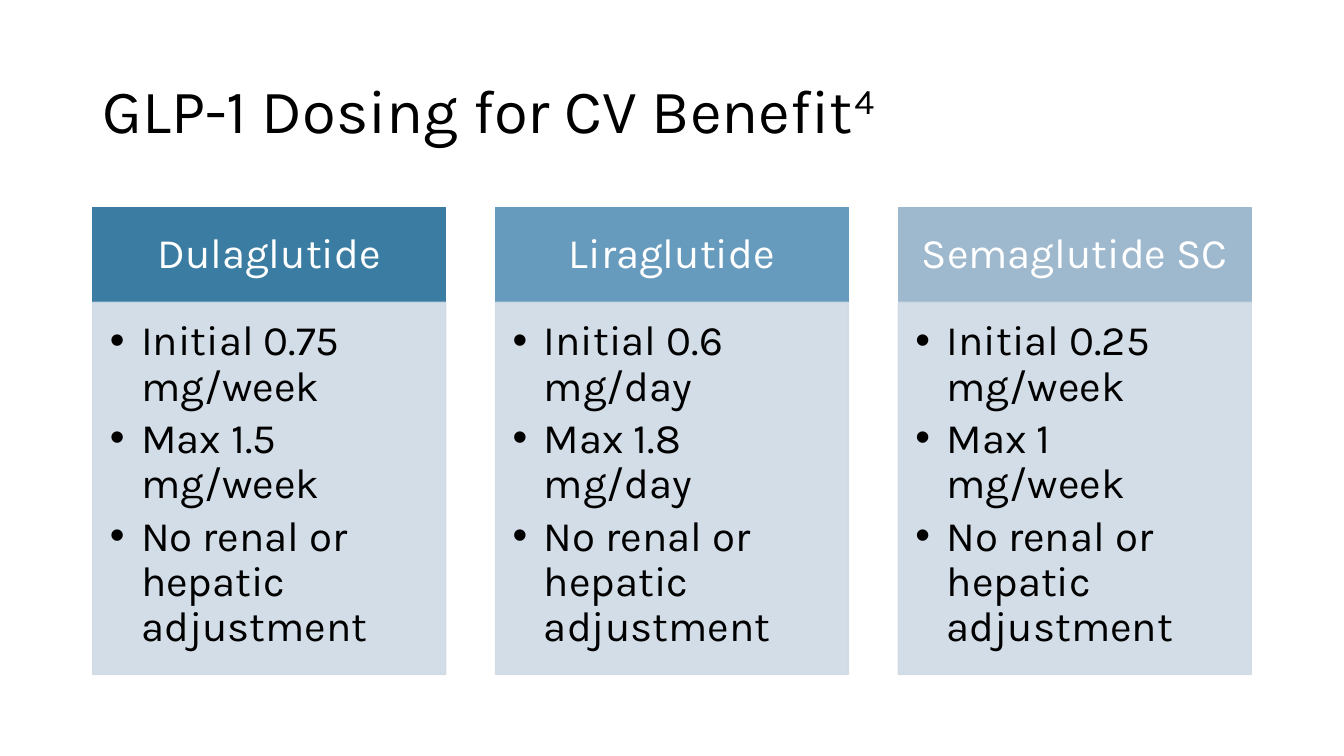
import pptx
import pptx.dml.color
import pptx.enum.shapes
import pptx.enum.text
import pptx.oxml
import pptx.oxml.ns
import pptx.util
from pptx.util import Inches

TITLE = "GLP-1 Dosing for CV Benefit"
TITLE_REFERENCE = "4"
ADJUSTMENT = "No renal or hepatic adjustment"
DRUGS = [
    ("Dulaglutide", "dulaglutide", ["Initial 0.75 mg/week", "Max 1.5 mg/week", ADJUSTMENT]),
    ("Liraglutide", "liraglutide", ["Initial 0.6 mg/day", "Max 1.8 mg/day", ADJUSTMENT]),
    ("Semaglutide SC", "semaglutide", ["Initial 0.25 mg/week", "Max 1 mg/week", ADJUSTMENT]),
]
COLORS = {
    "dulaglutide": "3B7DA2",
    "liraglutide": "679BBD",
    "semaglutide": "9EB8CE",
    "body": "CFDAE5",
    "text": "000000",
    "heading": "FFFFFF",
}
FONT = "Karla"
LEFT, CONTENT_WIDTH, COLUMN_WIDTH = 0.92, 11.49, 3.5
HEADING_TOP, HEADING_HEIGHT, BODY_HEIGHT = 2.06, 0.94, 3.69
BODY_OPACITY = 90
HEADING_INSETS = (0.23, 0.13, 0.23, 0.13)
BODY_INSETS = (0.17, 0.17, 0.23, 0.26)
BULLET_INDENT = 0.31


def rgb(name):
    return pptx.dml.color.RGBColor.from_string(COLORS[name])


def format_run(run, size, color):
    run.font.name = FONT
    run.font.size = pptx.util.Pt(size)
    run.font.color.rgb = rgb(color)


def add_panel(slide, left, top, height, color, lines, text_color, insets, anchor, alignment, space_after):
    shape = slide.shapes.add_shape(
        pptx.enum.shapes.MSO_SHAPE.RECTANGLE,
        Inches(left), Inches(top), Inches(COLUMN_WIDTH), Inches(height))
    shape.shadow.inherit = False
    shape.fill.solid()
    shape.fill.fore_color.rgb = rgb(color)
    shape.line.color.rgb = rgb(color)
    shape.line.width = pptx.util.Pt(1)
    frame = shape.text_frame
    frame.word_wrap = True
    frame.vertical_anchor = anchor
    frame.margin_left, frame.margin_top, frame.margin_right, frame.margin_bottom = map(Inches, insets)
    frame.text = "\n".join(lines)
    for paragraph in frame.paragraphs:
        paragraph.alignment = alignment
        paragraph.line_spacing = 0.9
        paragraph.space_after = pptx.util.Pt(space_after)
        format_run(paragraph.runs[0], 30, text_color)
    return shape


def set_opacity(shape, percent):
    for color in shape.element.spPr.iter(pptx.oxml.ns.qn("a:srgbClr")):
        alpha = pptx.oxml.parse_xml(f'<a:alpha {pptx.oxml.ns.nsdecls("a")} val="{percent * 1000}"/>')
        color.append(alpha)


def add_bullet(paragraph):
    properties = paragraph._p.get_or_add_pPr()
    properties.set("marL", str(Inches(BULLET_INDENT)))
    properties.set("indent", str(-Inches(BULLET_INDENT)))
    namespace = pptx.oxml.ns.nsdecls("a")
    properties.append(pptx.oxml.parse_xml(f'<a:buFont {namespace} typeface="Arial"/>'))
    properties.append(pptx.oxml.parse_xml(f'<a:buChar {namespace} char="•"/>'))


def add_title(slide):
    title = slide.shapes.title
    title.left, title.top, title.width, title.height = map(Inches, (LEFT, 0.4, 11.5, 1.45))
    frame = title.text_frame
    frame.text = TITLE
    frame.word_wrap = True
    frame.auto_size = pptx.enum.text.MSO_AUTO_SIZE.NONE
    frame.vertical_anchor = pptx.enum.text.MSO_ANCHOR.MIDDLE
    paragraph = frame.paragraphs[0]
    paragraph.alignment = pptx.enum.text.PP_ALIGN.LEFT
    paragraph.line_spacing = 0.9
    reference = paragraph.add_run()
    reference.text = TITLE_REFERENCE
    for run in paragraph.runs:
        format_run(run, 44, "text")
    reference.font._element.set("baseline", "30000")


def main():
    presentation = pptx.Presentation()
    presentation.slide_width = Inches(13.33)
    presentation.slide_height = Inches(7.5)
    slide = presentation.slides.add_slide(presentation.slide_layouts[5])
    add_title(slide)

    anchors = pptx.enum.text.MSO_ANCHOR
    alignments = pptx.enum.text.PP_ALIGN
    pitch = (CONTENT_WIDTH - COLUMN_WIDTH) / (len(DRUGS) - 1)
    for index, (name, color, doses) in enumerate(DRUGS):
        left = LEFT + index * pitch
        add_panel(slide, left, HEADING_TOP, HEADING_HEIGHT, color, [name], "heading",
                  HEADING_INSETS, anchors.MIDDLE, alignments.CENTER, 0)
        body = add_panel(slide, left, HEADING_TOP + HEADING_HEIGHT, BODY_HEIGHT, "body", doses, "text",
                         BODY_INSETS, anchors.TOP, alignments.LEFT, 5)
        set_opacity(body, BODY_OPACITY)
        for paragraph in body.text_frame.paragraphs:
            add_bullet(paragraph)

    presentation.save("out.pptx")


if __name__ == "__main__":
    main()
